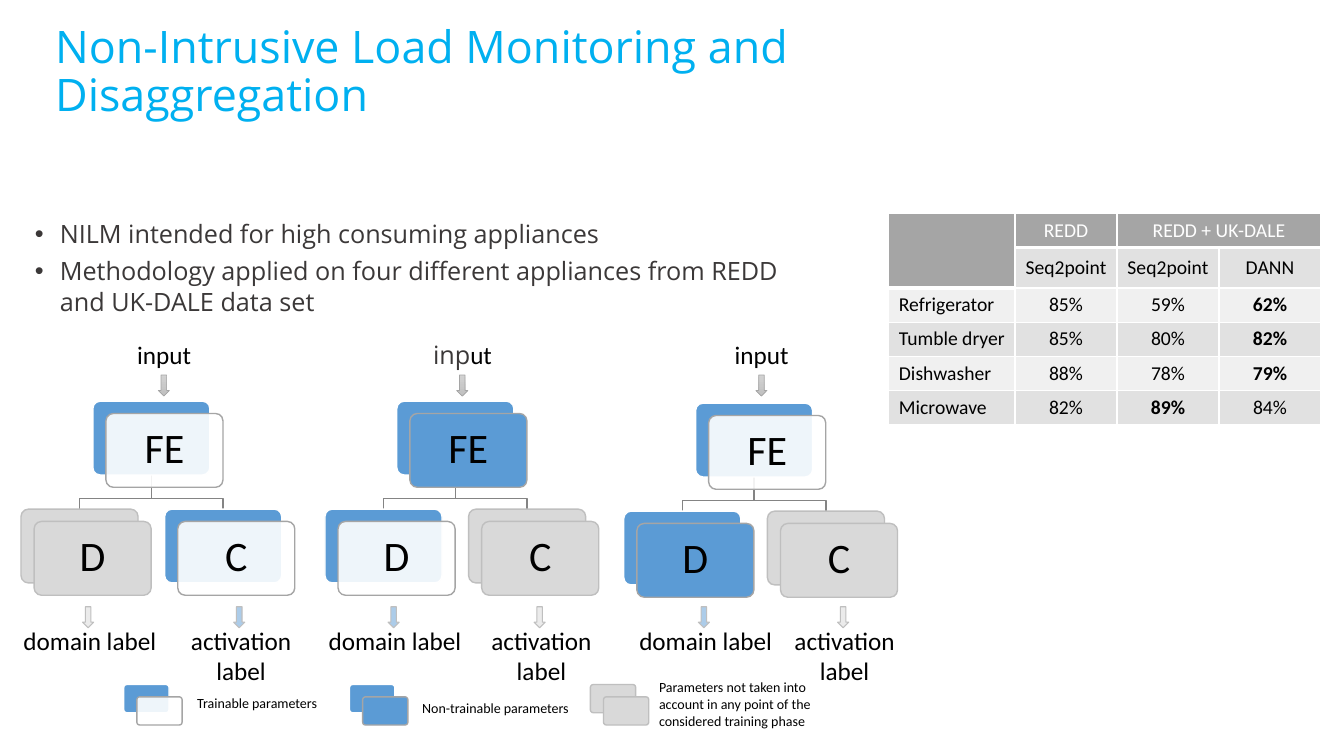
import lxml.etree
import pptx
import pptx.dml.color
import pptx.enum.shapes
import pptx.enum.text
import pptx.oxml.ns
import pptx.util

Cm, Pt = pptx.util.Cm, pptx.util.Pt
RGB = pptx.dml.color.RGBColor.from_string
qn = pptx.oxml.ns.qn
ALIGN = pptx.enum.text.PP_ALIGN
MIDDLE = pptx.enum.text.MSO_ANCHOR.MIDDLE
SHAPE = pptx.enum.shapes.MSO_SHAPE

COLORS = {
    "title": "00B0F0", "body": "3B3838", "black": "000000", "white": "FFFFFF",
    "blue": "5B9BD5", "gray": "D9D9D9", "gray line": "BFBFBF",
    "line": "A5A5A5", "connector": "848484",
    "gradient top": "D2D2D2", "gradient bottom": "C0C0C0",
    "header": "A5A5A5", "dark row": "E1E1E1", "light row": "F0F0F0",
}

presentation = pptx.Presentation()
presentation.slide_width = Cm(33.87)
presentation.slide_height = Cm(19.05)
slide = presentation.slides.add_slide(presentation.slide_layouts[6])


def add_block(kind, left, top, width, height, fill, line, line_width=1, opacity=100):
    """Add a filled, outlined preset shape without shadow."""
    shape = slide.shapes.add_shape(kind, Cm(left), Cm(top), Cm(width), Cm(height))
    shape.shadow.inherit = False
    shape.fill.solid()
    shape.fill.fore_color.rgb = RGB(COLORS[fill])
    if opacity < 100:
        color = shape.element.spPr.find(qn("a:solidFill"))[0]
        lxml.etree.SubElement(color, qn("a:alpha"), val=str(opacity * 1000))
    shape.line.color.rgb = RGB(COLORS[line])
    shape.line.width = Pt(line_width)
    return shape


def add_run(paragraph, text, color="black", **font_format):
    run = paragraph.add_run()
    run.text = text
    for name, value in {"name": "Calibri", "size": Pt(18), **font_format}.items():
        setattr(run.font, name, value)
    run.font.color.rgb = RGB(COLORS[color])


# Title
title = slide.shapes.add_textbox(Cm(0.89), Cm(0), Cm(28.78), Cm(3.56))
frame_format = {"word_wrap": True, "vertical_anchor": MIDDLE, "margin_left": Cm(0.5),
                "margin_top": Cm(0.25), "margin_right": Cm(2.54), "margin_bottom": Cm(0.13)}
for name, value in frame_format.items():
    setattr(title.text_frame, name, value)
paragraph = title.text_frame.paragraphs[0]
paragraph.line_spacing = 0.9
add_run(paragraph, "Non-Intrusive Load Monitoring and Disaggregation", "title",
        name="Open Sans", size=Pt(32))

# Bullets
body = slide.shapes.add_textbox(Cm(0.38), Cm(5.38), Cm(20.57), Cm(13.18))
body.text_frame.word_wrap = True
body.text_frame.margin_left = Cm(0.5)
bullets = [
    "NILM intended for high consuming appliances",
    "Methodology applied on four different appliances from REDD and UK-DALE data set",
]
for index, text in enumerate(bullets):
    paragraph = body.text_frame.add_paragraph() if index else body.text_frame.paragraphs[0]
    properties = paragraph._p.get_or_add_pPr()
    properties.set("marL", str(Cm(0.63)))
    properties.set("indent", str(-Cm(0.63)))
    lxml.etree.SubElement(properties, qn("a:buFont"), typeface="Arial")
    lxml.etree.SubElement(properties, qn("a:buChar"), char="•")
    if index:
        paragraph.space_before = Pt(5)
    add_run(paragraph, text, "body", name="Open Sans")

# Back fill, back line, front fill, front line, front opacity
STYLES = {
    "trainable": ("blue", "white", "white", "line", 90),
    "frozen": ("blue", "white", "blue", "line", 100),
    "unused": ("gray", "gray line", "gray", "gray line", 100),
}

# Each phase: left and top of the FE card, then the styles of FE, D and C
phases = [
    (2.34, 10.11, "trainable", "unused", "trainable"),
    (10.0, 10.11, "frozen", "trainable", "unused"),
    (17.53, 10.16, "trainable", "frozen", "unused"),
]
CARD_WIDTH, CARD_HEIGHT, BRANCH, DROP = 2.95, 1.86, 1.81, 2.72
cards = []
for left, top, extractor, domain, classifier in phases:
    center, bottom = left + CARD_WIDTH / 2, top + CARD_HEIGHT
    for side in (-BRANCH, BRANCH):
        builder = slide.shapes.build_freeform(Cm(center), Cm(bottom))
        builder.add_line_segments(
            [(Cm(center), Cm(bottom + 0.6)), (Cm(center + side), Cm(bottom + 0.6)),
             (Cm(center + side), Cm(top + DROP))], close=False)
        branch = builder.convert_to_shape()
        branch.shadow.inherit = False
        branch.fill.background()
        branch.line.color.rgb = RGB(COLORS["connector"])
        branch.line.width = Pt(1)
    cards += [
        (left, top, CARD_WIDTH, CARD_HEIGHT, extractor, "FE"),
        (left - BRANCH, top + DROP, CARD_WIDTH, CARD_HEIGHT, domain, "D"),
        (left + BRANCH, top + DROP, CARD_WIDTH, CARD_HEIGHT, classifier, "C"),
    ]
cards += [(left, 17.25, 1.14, 0.71, style, "")
          for left, style in zip((3.12, 8.81, 14.88), STYLES)]

for left, top, width, height, style, label in cards:
    back_fill, back_line, front_fill, front_line, opacity = STYLES[style]
    back = add_block(SHAPE.ROUNDED_RECTANGLE, left, top, width, height, back_fill, back_line)
    front = add_block(SHAPE.ROUNDED_RECTANGLE, left + 0.33, top + 0.31, width, height,
                      front_fill, front_line, opacity=opacity)
    for card in (back, front):
        card.adjustments[0] = 0.1
    if label:
        front.text_frame.vertical_anchor = MIDDLE
        paragraph = front.text_frame.paragraphs[0]
        paragraph.alignment = ALIGN.CENTER
        paragraph.line_spacing = 0.9
        add_run(paragraph, label, size=Pt(30))

# Arrows into and out of the networks
ARROW_WIDTH, ARROW_HEIGHT = 0.28, 0.53
for left in (3.99, 11.51, 19.05):
    arrow = add_block(SHAPE.DOWN_ARROW, left, 9.45, ARROW_WIDTH, ARROW_HEIGHT,
                      "gray", "line", 0.5)
    arrow.fill.gradient()
    arrow.fill.gradient_angle = 270
    for stop, color in zip(arrow.fill.gradient_stops, ("gradient top", "gradient bottom")):
        stop.color.rgb = RGB(COLORS[color])
for left, color in [(2.08, "gray"), (5.89, "blue"), (9.78, "blue"),
                    (13.46, "gray"), (17.6, "blue"), (21.11, "gray")]:
    add_block(SHAPE.DOWN_ARROW, left, 15.29, ARROW_WIDTH, ARROW_HEIGHT,
              color, "gray line", 0.75, 50)

# Labels: left, top, width, height, alignment, runs
plain, small = {}, {"size": Pt(10)}
open_sans = {"name": "Open Sans", "color": "body"}
labels = [
    (left, 8.43, 2.01, 0.99, ALIGN.CENTER, runs)
    for left, runs in [(3.13, [("input", plain)]),
                       (10.65, [("inp", open_sans), ("ut", plain)]),
                       (18.19, [("input", plain)])]
]
for text, height, lefts in [("domain label", 0.99, (0.13, 7.82, 15.65)),
                            ("activation label", 1.75, (3.94, 11.51, 19.15))]:
    labels += [(left, 15.62, 4.27, height, ALIGN.CENTER, [(text, plain)]) for left in lefts]
labels += [
    (4.72, 17.37, 4, 0.69, ALIGN.LEFT, [("Trainable parameters", small)]),
    (10.39, 17.5, 4.5, 0.69, ALIGN.LEFT, [("Non-trainable parameters", small)]),
    (16.36, 16.97, 4.57, 1.55, ALIGN.LEFT,
     [("Parameters not taken into account in any point of the considered training phase",
       small)]),
]
for left, top, width, height, alignment, runs in labels:
    label = slide.shapes.add_textbox(Cm(left), Cm(top), Cm(width), Cm(height))
    label.text_frame.word_wrap = True
    paragraph = label.text_frame.paragraphs[0]
    paragraph.alignment = alignment
    for text, run_format in runs:
        add_run(paragraph, text, **run_format)

# Results table
results = [
    ("", "REDD", "REDD + UK-DALE", ""),
    ("", "Seq2point", "Seq2point", "DANN"),
    ("Refrigerator", "85%", "59%", "62%"),
    ("Tumble dryer", "85%", "80%", "82%"),
    ("Dishwasher", "88%", "78%", "79%"),
    ("Microwave", "82%", "89%", "84%"),
]
best = {(2, 3), (3, 3), (4, 3), (5, 2)}
table = slide.shapes.add_table(6, 4, Cm(22.4), Cm(5.38), Cm(10.89), Cm(5.16)).table
for column, width in zip(table.columns, (3.18, 2.57, 2.57, 2.57)):
    column.width = Cm(width)
for row_index, row in enumerate(results):
    table.rows[row_index].height = Cm(0.86)
    for column_index, text in enumerate(row):
        cell = table.cell(row_index, column_index)
        is_header = row_index == 0 or (row_index, column_index) == (1, 0)
        for edge in ("lnL", "lnR", "lnT", "lnB"):
            thickness = Pt(3 if row_index == 0 and edge == "lnB" else 1)
            border = lxml.etree.SubElement(cell._tc.get_or_add_tcPr(), qn("a:" + edge),
                                           w=str(thickness))
            fill = lxml.etree.SubElement(border, qn("a:solidFill"))
            lxml.etree.SubElement(fill, qn("a:srgbClr"), val=COLORS["white"])
        cell.fill.solid()
        row_color = "dark row" if row_index % 2 else "light row"
        cell.fill.fore_color.rgb = RGB(COLORS["header" if is_header else row_color])
        cell.vertical_anchor = MIDDLE
        if row_index > 1 and column_index:
            cell.margin_left = cell.margin_right = Cm(0.18)
            cell.margin_top = cell.margin_bottom = 0
        if text:
            paragraph = cell.text_frame.paragraphs[0]
            paragraph.alignment = ALIGN.CENTER if column_index else ALIGN.LEFT
            add_run(paragraph, text, "white" if is_header else "black", size=Pt(14),
                    bold=(row_index, column_index) in best)
table.cell(0, 0).merge(table.cell(1, 0))
table.cell(0, 2).merge(table.cell(0, 3))

presentation.save("out.pptx")
